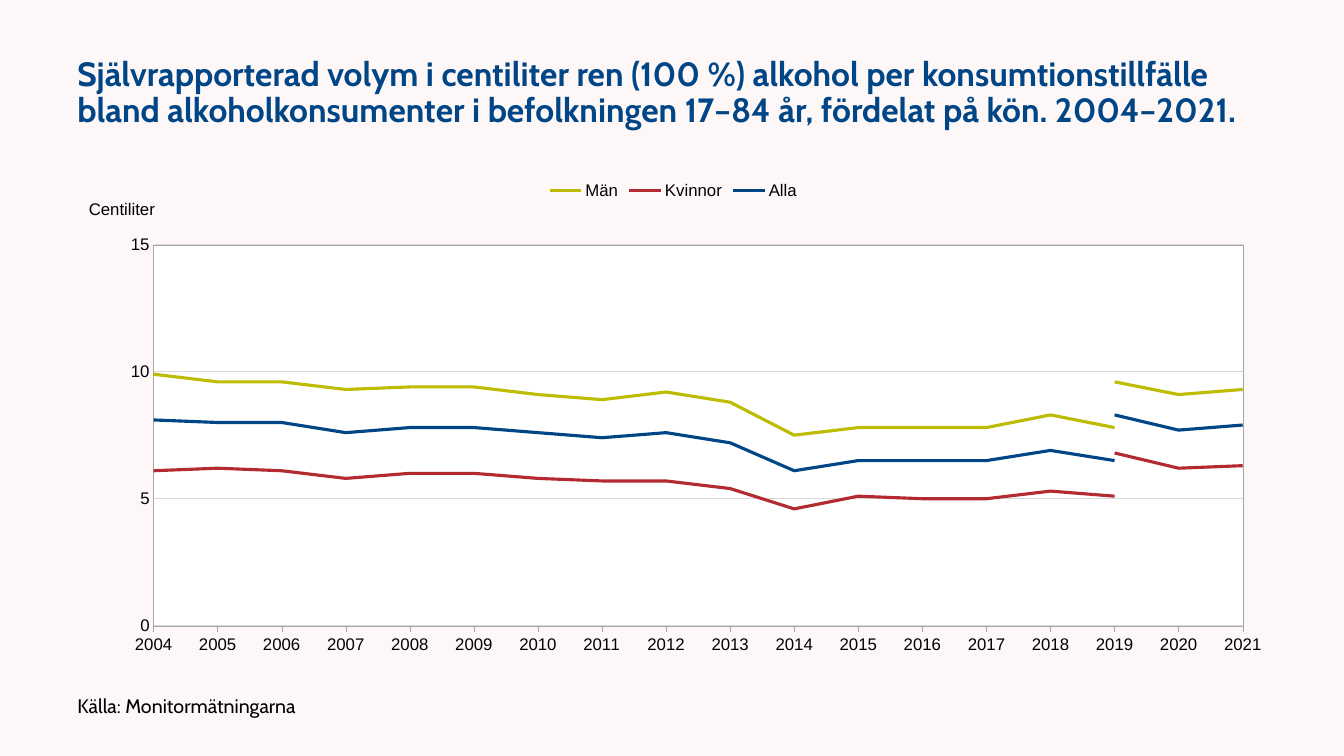
import pptx
import pptx.chart.data
import pptx.dml.color
import pptx.enum.chart
import pptx.enum.text
import pptx.oxml
import pptx.oxml.ns
import pptx.util
from dataclasses import dataclass

Pt = pptx.util.Pt
qn = pptx.oxml.ns.qn
NS = ('xmlns:c="http://schemas.openxmlformats.org/drawingml/2006/chart" '
      'xmlns:a="http://schemas.openxmlformats.org/drawingml/2006/main"')


@dataclass(frozen=True)
class Theme:
    """Colours, fonts and type sizes of the slide."""
    back: str = "FEF7F7"
    plot: str = "FFFFFF"
    text: str = "000000"
    title: str = "004687"
    axis: str = "A6A6A6"
    grid: str = "D9D9D9"
    men: str = "BEBC00"
    women: str = "B32B31"
    everyone: str = "004687"
    head_font: str = "Cabin"
    chart_font: str = "Arial"
    title_size: int = 24
    source_size: int = 14
    chart_size: int = 12


T = Theme()
YEARS = range(2004, 2022)
BREAK = 2019
GROUPS = [
    ("Män", T.men,
     [9.9, 9.6, 9.6, 9.3, 9.4, 9.4, 9.1, 8.9, 9.2, 8.8, 7.5, 7.8, 7.8, 7.8, 8.3, 7.8],
     [9.6, 9.1, 9.3]),
    ("Kvinnor", T.women,
     [6.1, 6.2, 6.1, 5.8, 6, 6, 5.8, 5.7, 5.7, 5.4, 4.6, 5.1, 5, 5, 5.3, 5.1],
     [6.8, 6.2, 6.3]),
    ("Alla", T.everyone,
     [8.1, 8, 8, 7.6, 7.8, 7.8, 7.6, 7.4, 7.6, 7.2, 6.1, 6.5, 6.5, 6.5, 6.9, 6.5],
     [8.3, 7.7, 7.9]),
]


def rgb(value):
    """Turn a hex string into a colour."""
    return pptx.dml.color.RGBColor.from_string(value)


def set_all(obj, formats):
    """Set each attribute of obj from a dict."""
    for name, value in formats.items():
        setattr(obj, name, value)


def set_font(font, name, size, color, bold=False):
    """Format a font."""
    set_all(font, {"name": name, "size": Pt(size), "bold": bold})
    font.color.rgb = rgb(color)


def set_line(line, color, width):
    """Format a line."""
    line.color.rgb = rgb(color)
    line.width = Pt(width)


def set_layout(parent, index, **parts):
    """Give a chart part a manual layout."""
    for old in parent.findall(qn("c:layout")):
        parent.remove(old)
    body = "".join(f'<c:{k} val="{v}"/>' for k, v in parts.items())
    parent.insert(index, pptx.oxml.parse_xml(
        f"<c:layout {NS}><c:manualLayout>{body}</c:manualLayout></c:layout>"))


def add_text(s, box, text, size, color, bold=False):
    """Place one paragraph, vertically centred in its box."""
    tf = s.shapes.add_textbox(*map(Pt, box)).text_frame
    set_all(tf, {"word_wrap": True,
                 "vertical_anchor": pptx.enum.text.MSO_ANCHOR.MIDDLE})
    p = tf.paragraphs[0]
    p.line_spacing = 0.9
    r = p.add_run()
    r.text = text
    set_font(r.font, T.head_font, size, color, bold)


def format_axes(chart):
    """Format both axes, the gridlines and the unit label."""
    marks = pptx.enum.chart.XL_TICK_MARK
    cat, val = chart.category_axis, chart.value_axis
    for axis, mark in ((cat, marks.OUTSIDE), (val, marks.NONE)):
        set_all(axis, {"major_tick_mark": mark, "minor_tick_mark": marks.NONE})
        set_line(axis.format.line, T.axis, 0.25)
        set_font(axis.tick_labels.font, T.chart_font, T.chart_size, T.text)
    set_all(val, {"minimum_scale": 0, "maximum_scale": 15, "major_unit": 5})
    set_all(val.tick_labels, {"number_format": "0", "number_format_is_linked": False})
    set_line(val.major_gridlines.format.line, T.grid, 0.75)
    val._element.find(qn("c:crosses")).addnext(
        pptx.oxml.parse_xml(f'<c:crossBetween {NS} val="midCat"/>'))
    p = val.axis_title.text_frame.paragraphs[0]
    r = p.add_run()
    r.text = "Centiliter"
    set_font(r.font, T.chart_font, T.chart_size, T.text)
    title = val.axis_title._element
    body = title.find(".//" + qn("a:bodyPr"))
    body.set("rot", "0")
    body.set("vert", "horz")
    set_layout(title, 1, xMode="edge", yMode="edge", x=0.015, y=0.05)


def format_legend(chart):
    """Show the legend on top with one entry for each group."""
    chart.has_legend = True
    legend = chart.legend
    set_all(legend, {"position": pptx.enum.chart.XL_LEGEND_POSITION.TOP,
                     "include_in_layout": False})
    set_font(legend.font, T.chart_font, T.chart_size, T.text)
    for n in range(len(GROUPS)):
        legend._element.insert(n + 1, pptx.oxml.parse_xml(
            f'<c:legendEntry {NS}><c:idx val="{2 * n + 1}"/>'
            '<c:delete val="1"/></c:legendEntry>'))


def format_plot(chart):
    """Place the plot area and give it a fill and a border."""
    area = chart._chartSpace.find(".//" + qn("c:plotArea"))
    set_layout(area, 0, layoutTarget="inner", xMode="edge", yMode="edge",
               x=0.071, y=0.149, w=0.899, h=0.764)
    area.append(pptx.oxml.parse_xml(
        f'<c:spPr {NS}><a:solidFill><a:srgbClr val="{T.plot}"/></a:solidFill>'
        f'<a:ln w="{Pt(0.25)}"><a:solidFill><a:srgbClr val="{T.axis}"/>'
        '</a:solidFill></a:ln></c:spPr>'))


def add_line_chart(s, box):
    """Draw two lines for each group, split at the break year."""
    data = pptx.chart.data.CategoryChartData(number_format="0.0")
    data.categories = [str(year) for year in YEARS]
    for n, (name, _, before, after) in enumerate(GROUPS, 1):
        data.add_series(name, before + [None] * (YEARS[-1] - BREAK))
        data.add_series(f"Series {2 * n}", [None] * (BREAK - YEARS[0]) + after)
    chart = s.shapes.add_chart(pptx.enum.chart.XL_CHART_TYPE.LINE,
                               *map(Pt, box), data).chart
    chart.has_title = False
    set_font(chart.font, T.chart_font, T.chart_size, T.text)
    plot = chart.plots[0]
    plot.vary_by_categories = False
    for i, series in enumerate(plot.series):
        series.smooth = False
        set_line(series.format.line, GROUPS[i // 2][1], 2.25)
    format_axes(chart)
    format_legend(chart)
    format_plot(chart)


def chart_slide(prs):
    """Build the slide with its title, chart and source."""
    s = prs.slides.add_slide(prs.slide_layouts[6])
    s.background.fill.solid()
    s.background.fill.fore_color.rgb = rgb(T.back)
    left = 48.24
    add_text(s, (left, 21.6, 864, 90),
             "Självrapporterad volym i centiliter ren (100 %) alkohol per "
             "konsumtionstillfälle bland alkoholkonsumenter i befolkningen "
             "17–84 år, fördelat på kön. 2004–2021.",
             T.title_size, T.title, True)
    add_line_chart(s, (left, 121.68, 865.44, 356.4))
    add_text(s, (left, 491.76, 432, 26.64), "Källa: Monitormätningarna",
             T.source_size, T.text)


def main():
    """Save the presentation."""
    prs = pptx.Presentation()
    set_all(prs, {"slide_width": Pt(960), "slide_height": Pt(540)})
    chart_slide(prs)
    prs.save("out.pptx")


if __name__ == "__main__":
    main()
